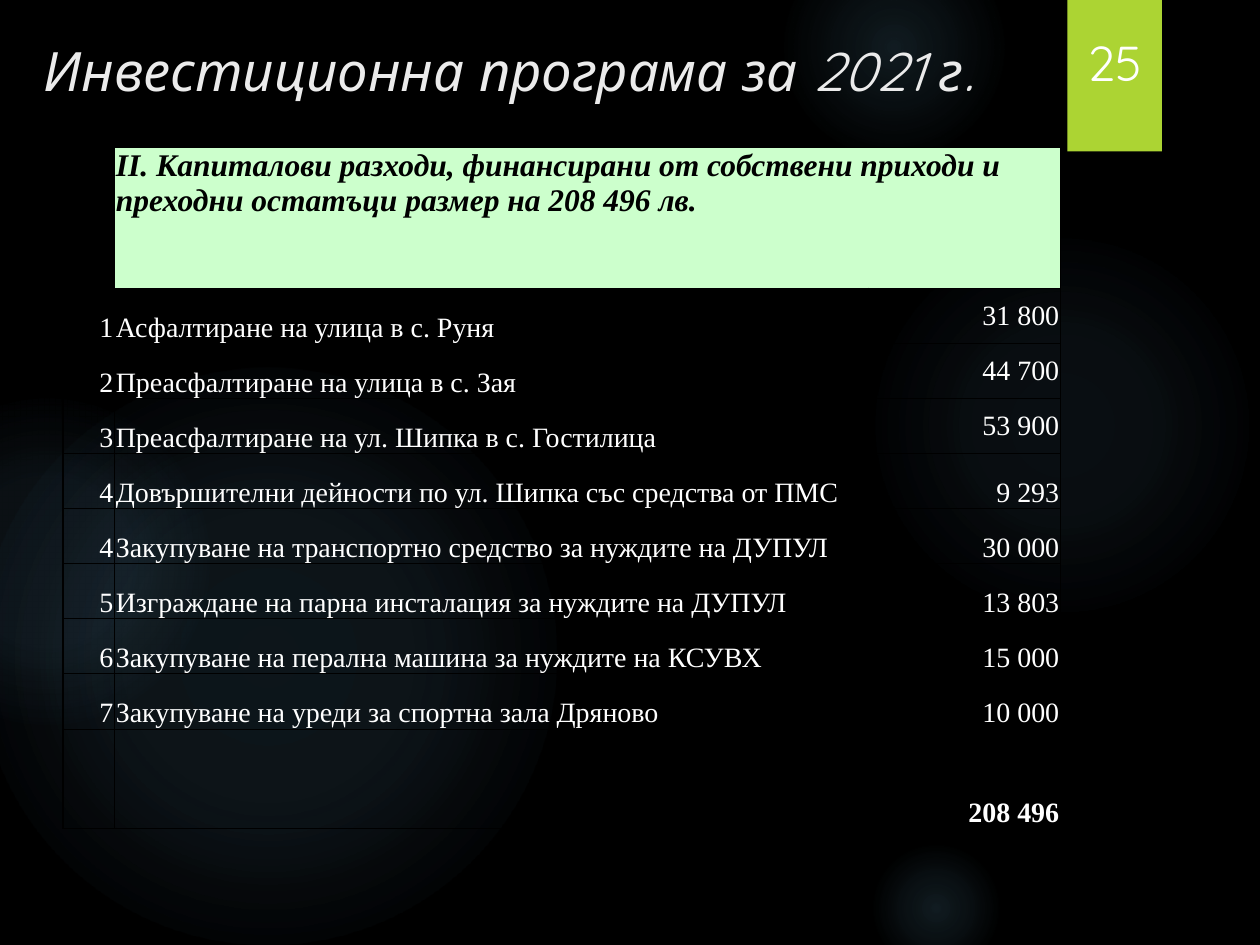
from lxml.etree import SubElement
from pptx import Presentation
from pptx.dml.color import RGBColor
from pptx.enum.shapes import MSO_SHAPE
from pptx.enum.text import MSO_ANCHOR, PP_ALIGN
from pptx.oxml import parse_xml
from pptx.oxml.ns import nsdecls, qn
from pptx.util import Pt

BLACK = RGBColor(0x00, 0x00, 0x00)
WHITE = RGBColor(0xFF, 0xFF, 0xFF)
TITLE_GREY = RGBColor(0xEB, 0xEB, 0xEB)
LIME = RGBColor(0xAC, 0xD4, 0x33)
MINT = RGBColor(0xCC, 0xFF, 0xCC)
GLOW = RGBColor(0x7A, 0xC4, 0xF0)

HEADING_FONT = "Quicksand"
TABLE_FONT = "Times New Roman"

GLOWS = [
    (496, 132, 222, [(0, 7), (36, 6), (69, 0)]),
    (448, -36, 126, [(0, 14), (36, 7), (73, 0)]),
    (496, 480, 78, [(0, 14), (36, 7), (66, 0)]),
    (-12, 210, 330, [(0, 11), (36, 10), (75, 0)]),
    (-66, 228, 186, [(0, 8), (36, 8), (72, 0)]),
]

PROGRAMME = "ІI. Капиталови разходи, финансирани от собствени приходи и преходни остатъци размер на 208 496 лв."
EXPENSES = [
    ("1", "Асфалтиране на улица в с. Руня", "31 800"),
    ("2", "Преасфалтиране на улица в с. Зая", "44 700"),
    ("3", "Преасфалтиране на ул. Шипка в с. Гостилица", "53 900"),
    ("4", "Довършителни дейности по ул. Шипка със средства от ПМС", "9 293"),
    ("4", "Закупуване на транспортно средство за нуждите на ДУПУЛ", "30 000"),
    ("5", "Изграждане на парна инсталация за нуждите на ДУПУЛ", "13 803"),
    ("6", "Закупуване на перална машина за нуждите на КСУВХ", "15 000"),
    ("7", "Закупуване на уреди за спортна зала Дряново", "10 000"),
]
TOTAL = "208 496"
CENTRED_AMOUNTS = 3


def write(frame, text, font=TABLE_FONT, size=16, color=WHITE, bold=False,
          italic=False, align=PP_ALIGN.LEFT):
    paragraph = frame.paragraphs[0]
    paragraph.alignment = align
    run = paragraph.add_run()
    run.text = text
    run.font.name = font
    run.font.size = Pt(size)
    run.font.color.rgb = color
    run.font.bold = bold
    run.font.italic = italic


def add_glow(slide, left, top, diameter, stops):
    glow = slide.shapes.add_shape(MSO_SHAPE.OVAL, Pt(left), Pt(top), Pt(diameter), Pt(diameter))
    glow.shadow.inherit = False
    glow.line.fill.background()
    stop_list = "".join(
        f'<a:gs pos="{position * 1000}"><a:srgbClr val="{GLOW}">'
        f'<a:alpha val="{alpha * 1000}"/></a:srgbClr></a:gs>'
        for position, alpha in stops
    )
    gradient = parse_xml(
        f'<a:gradFill {nsdecls("a")} rotWithShape="1"><a:gsLst>{stop_list}</a:gsLst>'
        '<a:path path="circle"><a:fillToRect l="50000" t="50000" r="50000" b="50000"/>'
        '</a:path></a:gradFill>'
    )
    glow.element.spPr.find(qn("a:prstGeom")).addnext(gradient)


def add_label(slide, box, text, anchor, **style):
    label = slide.shapes.add_textbox(*map(Pt, box))
    label.text_frame.word_wrap = True
    label.text_frame.vertical_anchor = anchor
    write(label.text_frame, text, font=HEADING_FONT, **style)


def add_page_tab(slide, left, top, width, height, number):
    tab = slide.shapes.add_shape(MSO_SHAPE.RECTANGLE, Pt(left), Pt(top), Pt(width), Pt(height))
    tab.fill.solid()
    tab.fill.fore_color.rgb = LIME
    tab.line.fill.background()
    tab.shadow.inherit = False
    shadow = SubElement(tab.element.spPr.find(qn("a:effectLst")), qn("a:outerShdw"),
                        blurRad=str(Pt(3)), dist=str(Pt(2)), dir="5400000", rotWithShape="0")
    shade = SubElement(shadow, qn("a:srgbClr"), val=str(BLACK))
    SubElement(shade, qn("a:alpha"), val="45000")
    number_width = 168
    add_label(slide, (left + (width - number_width) / 2, 18, number_width, 37.5), number,
              MSO_ANCHOR.BOTTOM, size=28, align=PP_ALIGN.CENTER)


def border_cell(cell, **widths):
    properties = cell._tc.get_or_add_tcPr()
    for side in ("L", "R", "T", "B"):
        line = SubElement(properties, qn(f"a:ln{side}"), w=str(Pt(widths.get(side, 0.5))))
        fill = SubElement(line, qn("a:solidFill"))
        SubElement(fill, qn("a:srgbClr"), val=str(BLACK))


def fill_cell(cell, text, anchor=MSO_ANCHOR.BOTTOM, **style):
    cell.margin_left = cell.margin_right = cell.margin_top = Pt(0.72)
    cell.margin_bottom = Pt(0)
    cell.vertical_anchor = anchor
    write(cell.text_frame, text, **style)


def add_expense_table(slide, left, top, column_widths, header_height, row_height, total_height):
    heights = [header_height] + [row_height] * len(EXPENSES) + [total_height]
    table = slide.shapes.add_table(
        len(heights), len(column_widths), Pt(left), Pt(top),
        Pt(sum(column_widths)), Pt(sum(heights))).table
    table.first_row = table.horz_banding = False
    for column, width in zip(table.columns, column_widths):
        column.width = Pt(width)
    for row, height in zip(table.rows, heights):
        row.height = Pt(height)
    last_row, last_column = len(heights) - 1, len(column_widths) - 1
    for r in range(len(heights)):
        for c in range(len(column_widths)):
            cell = table.cell(r, c)
            border_cell(cell, L=1 if c == 0 else 0.5, R=1 if c == last_column else 0.5,
                        B=1 if r == last_row else 0.5)
            cell.fill.background()

    header = table.cell(0, 1)
    header.merge(table.cell(0, last_column))
    header.fill.solid()
    header.fill.fore_color.rgb = MINT
    fill_cell(header, PROGRAMME, MSO_ANCHOR.TOP, size=18, color=BLACK, bold=True, italic=True)
    for r, (number, expense, amount) in enumerate(EXPENSES, 1):
        fill_cell(table.cell(r, 0), number, align=PP_ALIGN.RIGHT)
        fill_cell(table.cell(r, 1), expense)
        amount_anchor = MSO_ANCHOR.MIDDLE if r <= CENTRED_AMOUNTS else MSO_ANCHOR.BOTTOM
        fill_cell(table.cell(r, 2), amount, amount_anchor, align=PP_ALIGN.RIGHT)
    fill_cell(table.cell(last_row, last_column), TOTAL, bold=True, align=PP_ALIGN.RIGHT)


def main():
    presentation = Presentation()
    presentation.slide_width, presentation.slide_height = Pt(720), Pt(540)
    slide = presentation.slides.add_slide(presentation.slide_layouts[6])
    slide.background.fill.solid()
    slide.background.fill.fore_color.rgb = BLACK
    for left, top, diameter, stops in GLOWS:
        add_glow(slide, left, top, diameter, stops)
    add_page_tab(slide, 610, 0, 54, 86.5, "25")
    add_label(slide, (18, 18, 648, 60), "Инвестиционна програма за 2021 г.",
              MSO_ANCHOR.TOP, size=31, color=TITLE_GREY, italic=True)
    add_expense_table(slide, 36, 84, (29.5, 431, 109.5), 80.6, 31.5, 57)
    presentation.save("out.pptx")


if __name__ == "__main__":
    main()
